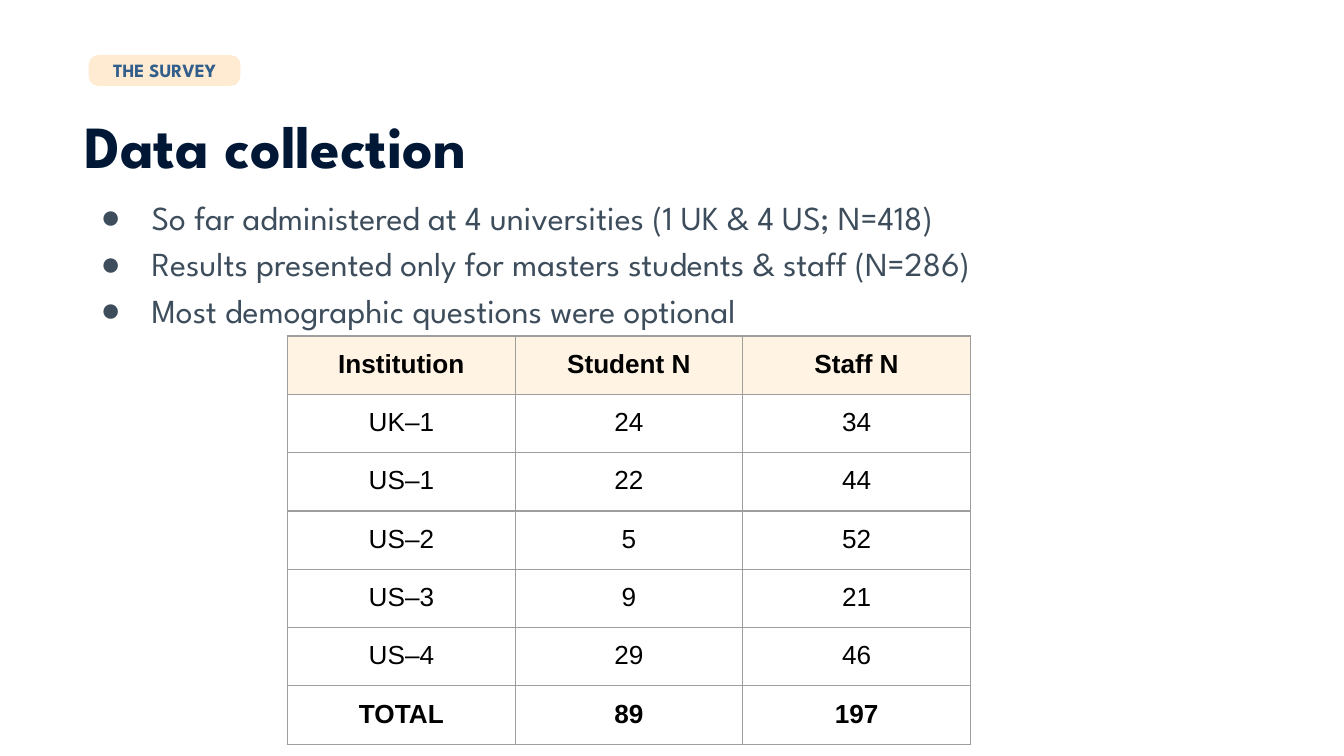
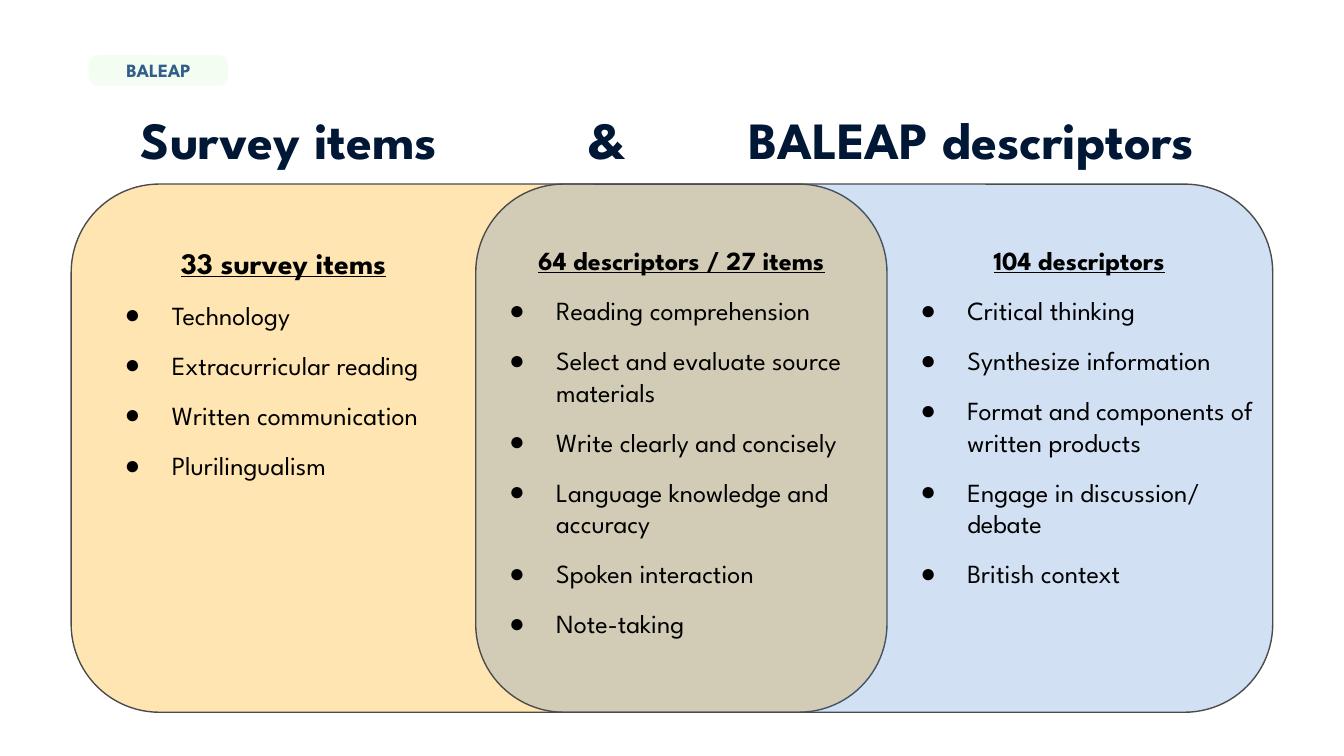
from lxml.etree import SubElement
from pptx import Presentation
from pptx.dml.color import RGBColor
from pptx.enum.shapes import MSO_SHAPE as Shape
from pptx.enum.text import MSO_ANCHOR as Anchor, MSO_AUTO_SIZE as AutoSize, PP_ALIGN as Align
from pptx.oxml.ns import qn
from pptx.util import Inches, Pt

DISPLAY_FONT = "League Spartan"
PLAIN_FONT = "Arial"
NAVY, SLATE, BLUE, BLACK = "001836", "3D4D5C", "315E8B", "000000"
OUTLINE, GRID, HEADER_FILL = "4B4B4B", "9E9E9E", "FFF3E4"
LEFT, TITLE_TOP, TITLE_HEIGHT = 0.53, 0.63, 0.63

COLLECTION_POINTS = [
    "So far administered at 4 universities (1 UK & 4 US; N=418)",
    "Results presented only for masters students & staff (N=286)",
    "Most demographic questions were optional",
]
PARTICIPANTS = [
    ("Institution", "Student N", "Staff N"),
    ("UK–1", "24", "34"),
    ("US–1", "22", "44"),
    ("US–2", "5", "52"),
    ("US–3", "9", "21"),
    ("US–4", "29", "46"),
    ("TOTAL", "89", "197"),
]
# left, width, fill, opacity in percent
OVERLAPPING_SETS = [
    (LEFT, 6.07, "FFAA00", 30),
    (3.54, 5.93, "2B70C9", 21),
]
# left, width, height, heading, heading size, points
COLUMNS = [
    (0.68, 2.86, 1.98, "33 survey items", 16,
     ["Technology", "Extracurricular reading", "Written communication",
      "Plurilingualism"]),
    (3.54, 3.06, 3.16, "64 descriptors / 27 items", 14,
     ["Reading comprehension", "Select and evaluate source materials",
      "Write clearly and concisely", "Language knowledge and accuracy",
      "Spoken interaction", "Note-taking"]),
    (6.6, 2.86, 2.79, "104 descriptors", 14,
     ["Critical thinking", "Synthesize information",
      "Format and components of written products",
      "Engage in discussion/ debate", "British context"]),
]


def rgb(value):
    return RGBColor.from_string(value)


def add_bullet(paragraph, color, hanging):
    properties = paragraph._p.get_or_add_pPr()
    properties.set("marL", str(Inches(0.5)))
    properties.set("indent", str(-Inches(hanging)))
    bullet_color = SubElement(properties, qn("a:buClr"))
    SubElement(bullet_color, qn("a:srgbClr"), val=color)
    SubElement(properties, qn("a:buFont"), typeface=PLAIN_FONT)
    SubElement(properties, qn("a:buChar"), char="●")


def write(frame, text, size, color=BLACK, font=DISPLAY_FONT, bold=False,
          underline=False, align=Align.LEFT, spacing=None, before=0, after=0,
          hanging=None, tabs=()):
    """Add one paragraph, using the empty first one if there is one."""
    paragraph = frame.paragraphs[0]
    if paragraph.runs:
        paragraph = frame.add_paragraph()
    paragraph.alignment = align
    paragraph.line_spacing = spacing
    paragraph.space_before, paragraph.space_after = Pt(before), Pt(after)
    if hanging:
        add_bullet(paragraph, color, hanging)
    if tabs:
        tab_list = SubElement(paragraph._p.get_or_add_pPr(), qn("a:tabLst"))
        for position in tabs:
            SubElement(tab_list, qn("a:tab"), pos=str(Inches(position)), algn="l")
    run = paragraph.add_run()
    run.text = text
    run.font.name, run.font.size = font, Pt(size)
    run.font.bold, run.font.underline = bold, underline
    run.font.color.rgb = rgb(color)


def set_margins(target):
    """Set the inner margins of a text frame or a table cell."""
    target.margin_left = target.margin_right = Inches(0.1)
    target.margin_top = target.margin_bottom = Inches(0.1)


def add_text_box(slide, left, top, width, height):
    box = slide.shapes.add_textbox(*map(Inches, (left, top, width, height)))
    box.text_frame.word_wrap = True
    set_margins(box.text_frame)
    return box.text_frame


def add_rounded(slide, left, top, width, height, radius, fill, opacity=100, line=None):
    shape = slide.shapes.add_shape(
        Shape.ROUNDED_RECTANGLE, *map(Inches, (left, top, width, height)))
    shape.shadow.inherit = False
    shape.adjustments[0] = radius
    shape.fill.solid()
    shape.fill.fore_color.rgb = rgb(fill)
    if opacity < 100:
        fill_color = shape._element.spPr.find(qn("a:solidFill"))[0]
        SubElement(fill_color, qn("a:alpha"), val=str(opacity * 1000))
    if line:
        shape.line.color.rgb = rgb(line)
        shape.line.width = Pt(0.75)
    else:
        shape.line.fill.background()
    return shape


def add_titled_slide(presentation, title, size, width, tag, tag_width, tag_fill, **title_format):
    slide = presentation.slides.add_slide(presentation.slide_layouts[6])
    frame = add_text_box(slide, LEFT, TITLE_TOP, width, TITLE_HEIGHT)
    write(frame, title, size, NAVY, bold=True, spacing=1.15, **title_format)
    pill = add_rounded(slide, 0.66, 0.41, tag_width, 0.23, 0.32, tag_fill)
    set_margins(pill.text_frame)
    pill.text_frame.word_wrap = True
    pill.text_frame.vertical_anchor = Anchor.MIDDLE
    write(pill.text_frame, tag, 10, BLUE, bold=True, align=Align.CENTER)
    return slide


def add_borders(cell):
    properties = cell._tc.get_or_add_tcPr()
    for side in ("lnL", "lnR", "lnT", "lnB"):
        border = SubElement(properties, qn(f"a:{side}"), w=str(Pt(0.75)))
        fill = SubElement(border, qn("a:solidFill"))
        SubElement(fill, qn("a:srgbClr"), val=GRID)


def add_participant_table(slide):
    last = len(PARTICIPANTS) - 1
    table = slide.shapes.add_table(
        len(PARTICIPANTS), len(PARTICIPANTS[0]),
        Inches(2.14), Inches(2.5), Inches(5.08), Inches(3.03)).table
    table.first_row = table.horz_banding = False
    for row, values in enumerate(PARTICIPANTS):
        for column, value in enumerate(values):
            cell = table.cell(row, column)
            set_margins(cell)
            add_borders(cell)
            if row == 0:
                cell.fill.solid()
                cell.fill.fore_color.rgb = rgb(HEADER_FILL)
            else:
                cell.fill.background()
            write(cell.text_frame, value, 14, font=PLAIN_FONT,
                  bold=row in (0, last), align=Align.CENTER)


def build_collection_slide(presentation):
    slide = add_titled_slide(presentation, "Data collection", 32, 8.94,
                             "THE SURVEY", 1.13, "FFEBD2", after=12)
    frame = add_text_box(slide, LEFT, 1.32, 8.94, 1.49)
    for point in COLLECTION_POINTS:
        write(frame, point, 18, SLATE, spacing=1.15, hanging=0.38)
    add_participant_table(slide)


def build_overlap_slide(presentation):
    slide = add_titled_slide(presentation, "\tSurvey items\t&\tBALEAP descriptors", 28, 9.22,
                             "BALEAP", 1.04, "F3FDF2", tabs=(0.42, 3.75, 4.94))
    for left, width, fill, opacity in OVERLAPPING_SETS:
        add_rounded(slide, left, 1.37, width, 3.93, 0.167, fill, opacity, OUTLINE)
    for left, width, height, heading, size, points in COLUMNS:
        frame = add_text_box(slide, left, 1.72, width, height)
        frame.auto_size = AutoSize.SHAPE_TO_FIT_TEXT
        write(frame, heading, size, bold=True, underline=True, align=Align.CENTER)
        for point in points:
            write(frame, point, 14, before=10, hanging=0.35,
                  after=10 if point == points[-1] else 0)


def main():
    presentation = Presentation()
    presentation.slide_width = Inches(10)
    presentation.slide_height = Inches(10) * 9 // 16
    build_collection_slide(presentation)
    build_overlap_slide(presentation)
    presentation.save("out.pptx")


if __name__ == "__main__":
    main()
